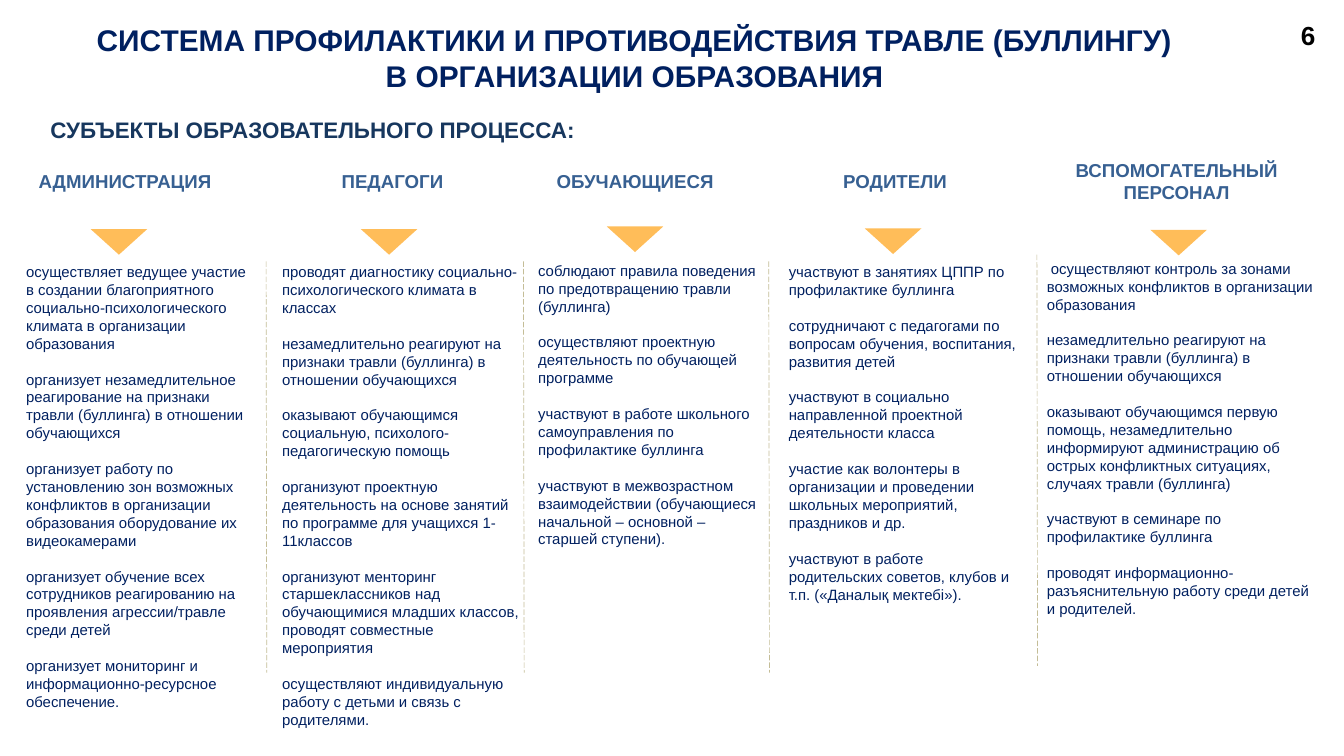
from dataclasses import dataclass

from lxml.etree import SubElement
from pptx import Presentation
from pptx.dml.color import RGBColor
from pptx.enum.dml import MSO_LINE
from pptx.enum.shapes import MSO_CONNECTOR, MSO_SHAPE
from pptx.enum.text import MSO_ANCHOR, PP_ALIGN
from pptx.oxml.ns import qn
from pptx.util import Emu, Inches, Pt

COLS, ROWS = 20, 11.25
UNIT = Inches(20) / COLS


@dataclass(frozen=True)
class Theme:
    """Fonts, colours and type sizes of the slide."""
    font: str = "Arial"
    navy: str = "002060"
    subtitle: str = "17375E"
    heading: str = "376092"
    accent: str = "FFBD59"
    divider: str = "C4BD97"
    black: str = "000000"
    title_pt: int = 32
    number_pt: int = 28
    subtitle_pt: int = 24
    heading_pt: int = 20
    body_pt: int = 16
    leading: float = 1.2


@dataclass(frozen=True)
class Column:
    """One group of people: its box, axes, heading and duties."""
    box: tuple
    heading: str
    heading_axis: float
    arrow_axis: float
    arrow_top: float
    duties: tuple
    indent: float = 0


T = Theme()

COLUMNS = (
    Column((0.29, 3.86, 3.61, 6.83), "АДМИНИСТРАЦИЯ", 1.86, 1.77, 3.41, (
        "осуществляет ведущее участие в создании благоприятного социально-психологического климата в организации образования",
        "организует незамедлительное реагирование на признаки травли (буллинга) в отношении обучающихся",
        "организует работу по установлению зон возможных конфликтов в организации образования оборудование их видеокамерами",
        "организует обучение всех сотрудников реагированию на проявления агрессии/травле среди детей",
        "организует мониторинг и информационно-ресурсное обеспечение.")),
    Column((4.1, 3.86, 3.72, 7.37), "ПЕДАГОГИ", 5.84, 5.79, 3.41, (
        "проводят диагностику социально-психологического климата в классах",
        "незамедлительно реагируют на признаки травли (буллинга) в отношении обучающихся",
        "оказывают обучающимся социальную, психолого-педагогическую помощь",
        "организуют проектную деятельность на основе занятий по программе для учащихся 1-11классов",
        "организуют менторинг старшеклассников над обучающимися младших классов, проводят совместные мероприятия",
        "осуществляют индивидуальную работу с детьми и связь с родителями.")),
    Column((7.91, 3.84, 3.59, 4.41), "ОБУЧАЮЩИЕСЯ", 9.45, 9.45, 3.37, (
        "соблюдают правила поведения по предотвращению травли (буллинга)",
        "осуществляют проектную деятельность по обучающей программе",
        "участвуют в работе школьного самоуправления по профилактике буллинга",
        "участвуют в межвозрастном взаимодействии (обучающиеся начальной – основной – старшей ступени).")),
    Column((11.64, 3.86, 3.6, 5.22), "РОДИТЕЛИ", 13.32, 13.29, 3.4, (
        "участвуют в занятиях ЦППР по профилактике буллинга",
        "сотрудничают с педагогами по вопросам обучения, воспитания, развития детей",
        "участвуют в социально направленной проектной деятельности класса",
        "участие как волонтеры в организации и проведении школьных мероприятий, праздников и др.",
        "участвуют в работе родительских советов, клубов и т.п. («Даналық мектебі»).")),
    Column((15.48, 3.81, 4.23, 6.56), "ВСПОМОГАТЕЛЬНЫЙ ПЕРСОНАЛ", 17.51, 17.54, 3.42, (
        "осуществляют контроль за зонами возможных конфликтов в организации образования",
        "незамедлительно реагируют на признаки травли (буллинга) в отношении обучающихся",
        "оказывают обучающимся первую помощь, незамедлительно информируют администрацию об острых конфликтных ситуациях, случаях травли (буллинга)",
        "участвуют в семинаре по профилактике буллинга",
        "проводят информационно-разъяснительную работу среди детей и родителей."), 0.06),
)

DIVIDERS = ((3.96, 3.89), (7.79, 3.89), (11.44, 3.89), (15.43, 3.79))


def grid(*values):
    """Turn grid columns or rows into slide lengths."""
    return [Emu(round(v * UNIT)) for v in values]


def write(s, lines, box=None, size=T.body_pt, color=T.navy, bold=False,
          align=PP_ALIGN.LEFT, anchor=MSO_ANCHOR.TOP, gap=0, indent=0):
    """Write paragraphs into a new text box or a given placeholder."""
    sp = s if box is None else s.shapes.add_textbox(*grid(*box))
    tf = sp.text_frame
    tf.word_wrap = True
    tf.vertical_anchor = anchor
    for i, line in enumerate(lines):
        p = tf.paragraphs[0] if i == 0 else tf.add_paragraph()
        p.alignment = align
        p.line_spacing = Pt(size * T.leading)
        p.space_before = Pt(gap if i else 0)
        if indent and i == 0:
            p._p.get_or_add_pPr().set("indent", str(grid(indent)[0]))
        r = p.add_run()
        r.text = line
        r.font.name, r.font.size, r.font.bold = T.font, Pt(size), bold
        r.font.color.rgb = RGBColor.from_string(color)
    return sp


def add_header(s, box):
    """Place the title, the page number and the subtitle in the top band."""
    x, y, w, h = box
    title = s.shapes.title
    title.left, title.top, title.width, title.height = grid(
        x + 0.21, y + 0.27, 18.47, 1.18)
    write(title, ("СИСТЕМА ПРОФИЛАКТИКИ И ПРОТИВОДЕЙСТВИЯ ТРАВЛЕ (БУЛЛИНГУ)",
                  "В ОРГАНИЗАЦИИ ОБРАЗОВАНИЯ"),
          size=T.title_pt, bold=True, align=PP_ALIGN.CENTER)
    write(s, ("6",), (x + w - 0.74, y + 0.24, 0.7, 0.57),
          size=T.number_pt, color=T.black, bold=True)
    write(s, ("СУБЪЕКТЫ ОБРАЗОВАТЕЛЬНОГО ПРОЦЕССА:",),
          (x + 0.65, y + h - 0.5, 9.44, 0.5),
          size=T.subtitle_pt, color=T.subtitle, bold=True)


def add_arrow(s, axis, top, w=0.84, h=0.38):
    """Draw a triangle pointing down, centred on an axis."""
    sp = s.shapes.add_shape(MSO_SHAPE.FLOWCHART_MERGE,
                            *grid(axis - w / 2, top, w, h))
    sp.shadow.inherit = False
    sp.fill.solid()
    sp.fill.fore_color.rgb = RGBColor.from_string(T.accent)
    sp.line.fill.background()


def add_column(s, column):
    """Place the heading, the arrow and the duties of one group."""
    w, h = 4.1, 0.78
    write(s, (column.heading,), (column.heading_axis - w / 2, 2.3, w, h),
          size=T.heading_pt, color=T.heading, bold=True,
          align=PP_ALIGN.CENTER, anchor=MSO_ANCHOR.MIDDLE)
    add_arrow(s, column.arrow_axis, column.arrow_top)
    write(s, column.duties, column.box, gap=T.body_pt * T.leading,
          indent=column.indent)


def add_divider(s, x, top, length=6.12):
    """Draw a dashed vertical line between two columns."""
    line = s.shapes.add_connector(MSO_CONNECTOR.STRAIGHT,
                                  *grid(x, top, x + 0.01, top + length))
    line.line.color.rgb = RGBColor.from_string(T.divider)
    line.line.width = Pt(0.75)
    line.line.dash_style = MSO_LINE.LONG_DASH
    SubElement(line._element.spPr, qn("a:effectLst"))


def main():
    """Build the slide and save it."""
    prs = Presentation()
    prs.slide_width, prs.slide_height = grid(COLS, ROWS)
    s = prs.slides.add_slide(prs.slide_layouts[5])
    add_header(s, (0, 0, COLS, 2.18))
    for column in COLUMNS:
        add_column(s, column)
    for x, top in DIVIDERS:
        add_divider(s, x, top)
    prs.save("out.pptx")


if __name__ == "__main__":
    main()
